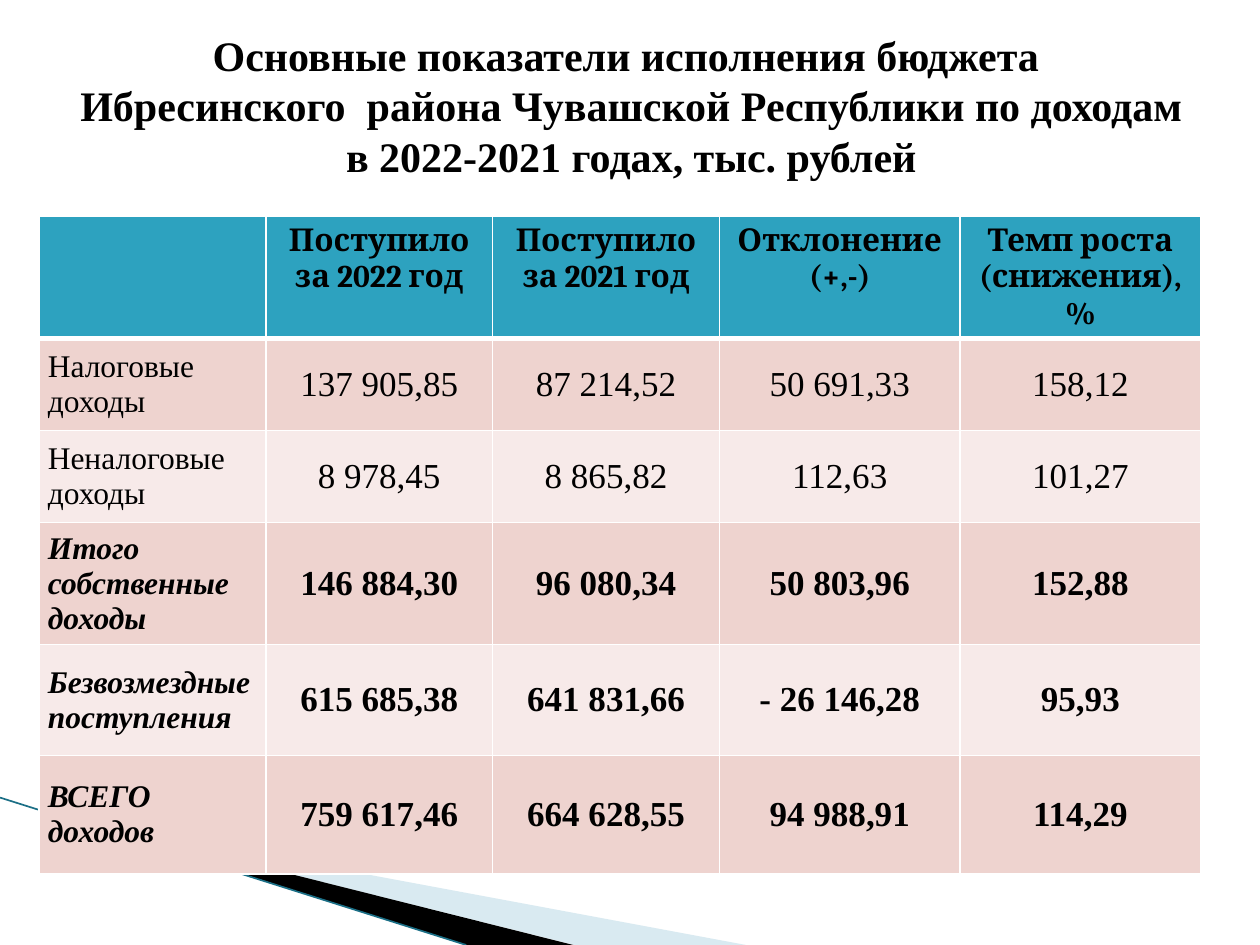
import pptx
import pptx.util
import pptx.dml.color
import pptx.enum.text
import pptx.enum.shapes
import pptx.oxml.ns
from lxml import etree

ALIGN = pptx.enum.text.PP_ALIGN
MIDDLE = pptx.enum.text.MSO_ANCHOR.MIDDLE
TOP = pptx.enum.text.MSO_ANCHOR.TOP
COLS, ROWS = 100, 75  # grid cells across and down the slide


def color(code):
    return pptx.dml.color.RGBColor.from_string(code)


def node(parent, tag, **attrs):
    return etree.SubElement(parent, pptx.oxml.ns.qn(tag), attrs)


class Deck:
    serif = "Times New Roman"
    head = "Cambria"
    ink = "000000"
    line = "FFFFFF"

    def __init__(self):
        self.prs = pptx.Presentation()
        self.prs.slide_width = pptx.util.Inches(10)
        self.prs.slide_height = pptx.util.Inches(7.5)
        self.slide = self.prs.slides.add_slide(self.prs.slide_layouts[5])

    def x(self, cols):
        return round(self.prs.slide_width * cols / COLS)

    def y(self, rows):
        return round(self.prs.slide_height * rows / ROWS)

    def style(self, para, align=ALIGN.CENTER, **font):
        para.alignment = align
        values = {"name": self.serif, "bold": False, "italic": False, **font}
        values["size"] = pptx.util.Pt(values["size"])
        for key, value in values.items():
            setattr(para.font, key, value)
        para.font.color.rgb = color(self.ink)

    def title(self, lines, left, top, wide, high):
        box = self.slide.shapes.title
        place = {"left": self.x(left), "top": self.y(top),
                 "width": self.x(wide), "height": self.y(high)}
        for key, value in place.items():
            setattr(box, key, value)
        frame = box.text_frame
        frame.word_wrap = True
        frame.auto_size = pptx.enum.text.MSO_AUTO_SIZE.NONE
        frame.vertical_anchor = MIDDLE
        para = frame.paragraphs[0]
        for i, text in enumerate(lines):
            if i:
                para.add_line_break()
            para.add_run().text = text
        self.style(para, size=24, bold=True)

    def wedge(self, points, fill, alpha=100):
        spots = [(self.x(a), self.y(b)) for a, b in points]
        build = self.slide.shapes.build_freeform(*spots[0])
        build.add_line_segments(spots[1:], close=True)
        shape = build.convert_to_shape()
        shape.shadow.inherit = False
        shape.fill.solid()
        shape.fill.fore_color.rgb = color(fill)
        shape.line.fill.background()
        tint = shape.fill._xPr.find(".//" + pptx.oxml.ns.qn("a:srgbClr"))
        node(tint, "a:alpha", val=str(alpha * 1000))

    def stroke(self, start, end, code, width):
        link = self.slide.shapes.add_connector(
            pptx.enum.shapes.MSO_CONNECTOR.STRAIGHT,
            self.x(start[0]), self.y(start[1]), self.x(end[0]), self.y(end[1]))
        link.line.color.rgb = color(code)
        link.line.width = pptx.util.Pt(width)
        node(link._element.spPr, "a:effectLst")

    def border(self, cell, **widths):
        props = cell._tc.get_or_add_tcPr()
        for side in "LRTB":
            size = pptx.util.Pt(widths.get(side, 1))
            edge = node(props, "a:ln" + side, w=str(size))
            fill = node(edge, "a:solidFill")
            node(fill, "a:srgbClr", val=self.line)

    def cell(self, cell, text, fill, anchor, inset, widths, **font):
        self.border(cell, **widths)
        cell.fill.solid()
        cell.fill.fore_color.rgb = color(fill)
        cell.vertical_anchor = anchor
        for side, gap in zip(("left", "right", "top", "bottom"), inset):
            setattr(cell, "margin_" + side, pptx.util.Inches(gap))
        cell.text = text
        for para in cell.text_frame.paragraphs:
            self.style(para, **font)

    def table(self, left, top, wides, highs, heads, data):
        grid = self.slide.shapes.add_table(
            len(highs), len(wides), self.x(left), self.y(top),
            self.x(sum(wides)), self.y(sum(highs))).table
        for col, wide in zip(grid.columns, wides):
            col.width = self.x(wide)
        for row, high in zip(grid.rows, highs):
            row.height = self.y(high)
        # Header row
        for c, text in enumerate(heads):
            self.cell(grid.cell(0, c), text, "2DA2BF", TOP, (0.1, 0.1, 0.05, 0.05),
                      {"B": 3}, name=self.head, size=18, bold=True)
        # Banded body rows: label first, then figures
        for r, (bold, *texts) in enumerate(data, 1):
            fill = "EED3CF" if r % 2 else "F7EAE9"
            edge = {"T": 3} if r == 1 else {}
            for c, text in enumerate(texts):
                font = {"size": 20} if c else {
                    "size": 18, "italic": bold, "align": ALIGN.LEFT}
                self.cell(grid.cell(r, c), text, fill, MIDDLE, (0.07,) * 4,
                          edge, bold=bold, **font)


HEADS = ["", "Поступило за 2022 год", "Поступило за 2021 год",
         "Отклонение\n(+,-)", "Темп роста (снижения),\n%"]
# Bold flag, label, figures
DATA = [
    (False, "Налоговые доходы", "137 905,85", "87 214,52", "50 691,33", "158,12"),
    (False, "Неналоговые доходы", "8 978,45", "8 865,82", "112,63", "101,27"),
    (True, "Итого собственные доходы", "146 884,30", "96 080,34", "50 803,96", "152,88"),
    (True, "Безвозмездные поступления", "615 685,38", "641 831,66", "- 26 146,28", "95,93"),
    (True, "ВСЕГО доходов", "759 617,46", "664 628,55", "94 988,91", "114,29"),
]


def main():
    deck = Deck()
    # Corner decoration
    deck.wedge([(5.5, 65), (59.2, 75), (45.6, 75)], "A0CBDC", 40)
    deck.wedge([(5.3, 64.9), (45.5, 75), (37, 75)], "000000")
    deck.stroke((0, 63.3), (37, 75), "1B6F86", 0.95)
    # Title
    deck.title(["Основные показатели исполнения бюджета ",
                "Ибресинского  района Чувашской Республики по доходам "
                "в 2022-2021 годах, тыс. рублей"], 5.1, 2.1, 90, 12.5)
    # Income table
    deck.table(3.1, 17.2, [18, 18, 18, 19.1, 19.1],
               [9, 7.3, 7.3, 9.4, 8.8, 9.4], HEADS, DATA)
    deck.prs.save("out.pptx")


if __name__ == "__main__":
    main()
